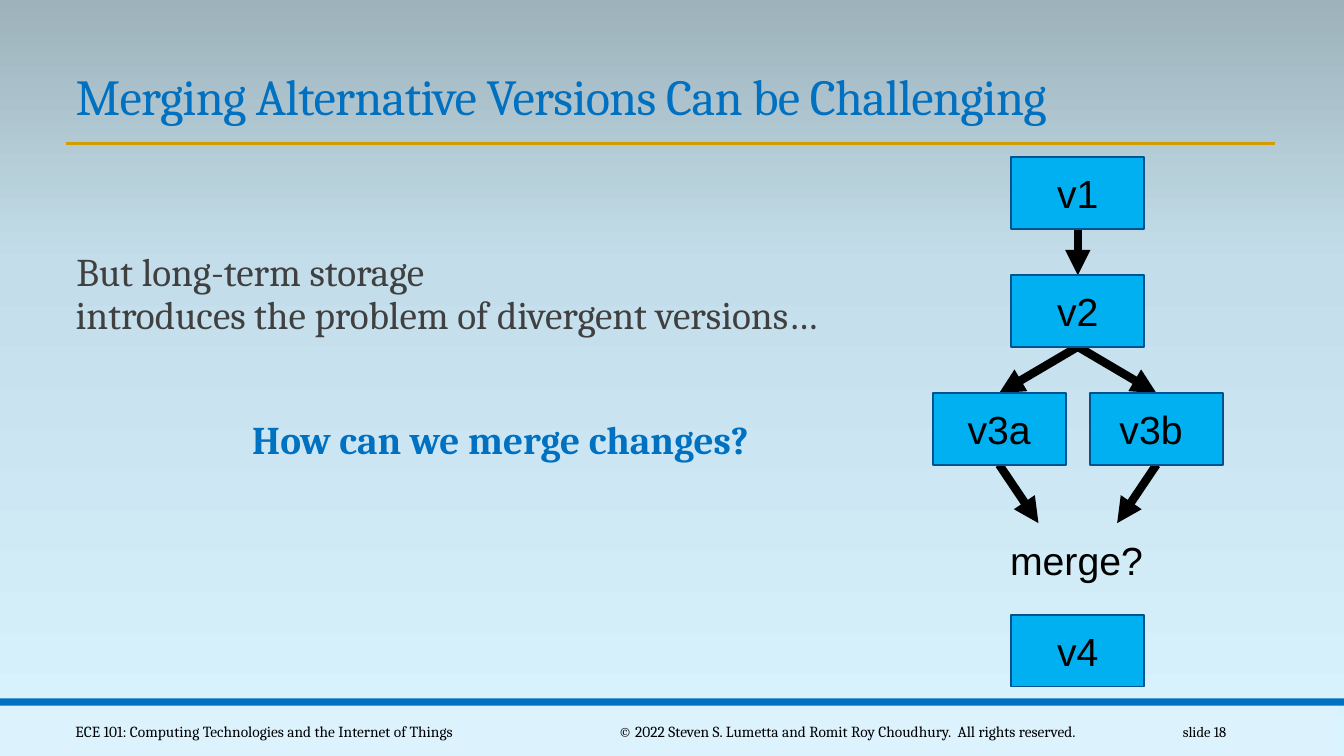
"""Build the slide about merging alternative versions."""
from dataclasses import dataclass

from lxml import etree
from pptx import Presentation
from pptx import util as u
from pptx.dml.color import RGBColor
from pptx.enum import shapes, text
from pptx.oxml import parse_xml
from pptx.oxml import ns


@dataclass(frozen=True)
class Theme:
    serif: str = "Cambria"
    sans: str = "Arial"
    blue: str = "0070C0"
    gold: str = "D09E00"
    grey: str = "404040"
    black: str = "000000"
    footer_fill: str = "DCF3FD"
    box_fill: str = "00B0F0"
    box_line: str = "00538E"
    backdrop: tuple = ((0, "DAF4FF"), (65, "C3DEEA"), (100, "9DB2BA"))
    title_size: float = 36
    body_size: float = 28
    footer_size: float = 11
    number_size: float = 10.5


theme = Theme()
LEFT, CENTER, RIGHT = text.PP_ALIGN.LEFT, text.PP_ALIGN.CENTER, text.PP_ALIGN.RIGHT


def add_span(para, words, font, size, color, align=LEFT):
    para.alignment = align
    span = para.add_run()
    span.text = words
    span.font.name = font
    span.font.size = u.Pt(size)
    span.font.color.rgb = RGBColor.from_string(color)
    return span


def add_line(slide, start, end, color, width, arrow=False):
    ends = [u.Inches(value) for value in (*start, *end)]
    line = slide.shapes.add_connector(shapes.MSO_CONNECTOR.STRAIGHT, *ends)
    line.line.color.rgb = RGBColor.from_string(color)
    line.line.width = u.Pt(width)
    if arrow:
        etree.SubElement(line.line._get_or_add_ln(), ns.qn("a:tailEnd"), type="triangle")
    etree.SubElement(line._element.spPr, ns.qn("a:effectLst"))


deck = Presentation()
deck.slide_width, deck.slide_height = u.Inches(13.33), u.Inches(7.5)
page = deck.slides.add_slide(deck.slide_layouts[1])

stops = "".join(
    f'<a:gs pos="{place * 1000}"><a:srgbClr val="{color}"/></a:gs>'
    for place, color in theme.backdrop
)
page._element.cSld.insert(0, parse_xml(
    f'<p:bg {ns.nsdecls("p", "a")}><p:bgPr><a:gradFill rotWithShape="1">'
    f'<a:gsLst>{stops}</a:gsLst><a:lin ang="16200000" scaled="0"/></a:gradFill>'
    f'<a:effectLst/></p:bgPr></p:bg>'
))

for left, top, height, color in (
    (-0.06, 7, 0.5, theme.footer_fill),
    (0, 6.93, 0.07, theme.blue),
):
    band = page.shapes.add_shape(
        shapes.MSO_SHAPE.RECTANGLE,
        u.Inches(left), u.Inches(top), u.Inches(13.33), u.Inches(height),
    )
    band.shadow.inherit = False
    band.fill.solid()
    band.fill.fore_color.rgb = RGBColor.from_string(color)
    band.line.fill.background()
add_line(page, (0.65, 1.42), (12.65, 1.42), theme.gold, 2)

title, body = page.placeholders
for holder, top, width, height in ((title, 0.59, 12.01, 0.71), (body, 1.78, 8.52, 4.64)):
    holder.left, holder.top = u.Inches(0.65), u.Inches(top)
    holder.width, holder.height = u.Inches(width), u.Inches(height)
    holder.text_frame.auto_size = text.MSO_AUTO_SIZE.NONE
    holder.text_frame.word_wrap = True

title.text_frame.vertical_anchor = text.MSO_ANCHOR.BOTTOM
heading = title.text_frame.paragraphs[0]
heading.line_spacing = 0.85
span = add_span(heading, "Merging Alternative Versions Can be Challenging",
                theme.serif, theme.title_size, theme.blue)
span._r.get_or_add_rPr().set("spc", "-50")

frame = body.text_frame
frame.vertical_anchor = text.MSO_ANCHOR.TOP
frame.margin_left = frame.margin_right = 0
frame.margin_top, frame.margin_bottom = u.Inches(0.73), u.Inches(0.05)
problem, question = frame.paragraphs[0], frame.add_paragraph()
for para, space_before in ((problem, 0), (question, 57)):
    settings = para._p.get_or_add_pPr()
    settings.set("marL", str(u.Inches(0.1)))
    settings.set("indent", str(u.Inches(-0.1)))
    bullet_color = etree.SubElement(settings, ns.qn("a:buClr"))
    etree.SubElement(bullet_color, ns.qn("a:srgbClr"), val=theme.blue)
    etree.SubElement(settings, ns.qn("a:buChar"), char=" ")
    para.line_spacing = 0.9
    para.space_before, para.space_after = u.Pt(space_before), u.Pt(2)

add_span(problem, "But long-term storage", theme.serif, theme.body_size, theme.grey)
problem.add_line_break()
add_span(problem, "introduces the problem of divergent versions…",
         theme.serif, theme.body_size, theme.grey)
add_span(question, "How can we merge changes?",
         theme.serif, theme.body_size, theme.blue, CENTER).font.bold = True

for words, left, width, size, align in (
    ("slide 18", 10.83, 1.43, theme.number_size, RIGHT),
    ("ECE 101: Computing Technologies and the Internet of Things",
     0.65, 4.58, theme.footer_size, LEFT),
    ("© 2022 Steven S. Lumetta and Romit Roy Choudhury.  All rights reserved.",
     5.46, 5.89, theme.footer_size, CENTER),
):
    box = page.shapes.add_textbox(u.Inches(left), u.Inches(7.06), u.Inches(width), u.Inches(0.4))
    box.text_frame.word_wrap = True
    box.text_frame.vertical_anchor = text.MSO_ANCHOR.MIDDLE
    add_span(box.text_frame.paragraphs[0], words, theme.serif, size, theme.black, align)

BOX_WIDTH, BOX_HEIGHT = 1.32, 0.71
MIDDLE, BRANCH = 10.69, 0.78
V1_TOP, V2_TOP, V3_TOP, V4_TOP = 1.56, 2.73, 3.9, 6.1

add_line(page, (MIDDLE, V1_TOP + BOX_HEIGHT), (MIDDLE, V2_TOP), theme.black, 6, arrow=True)
for side in (-1, 1):
    branch = MIDDLE + side * BRANCH
    add_line(page, (MIDDLE, V2_TOP + BOX_HEIGHT), (branch, V3_TOP), theme.black, 6, arrow=True)
    add_line(page, (branch, V3_TOP + BOX_HEIGHT), (MIDDLE + side * BRANCH / 2, 5.19),
             theme.black, 6, arrow=True)

for name, center, top in (
    ("v1", MIDDLE, V1_TOP),
    ("v2", MIDDLE, V2_TOP),
    ("v3a", MIDDLE - BRANCH, V3_TOP),
    ("v3b ", MIDDLE + BRANCH, V3_TOP),
    ("v4", MIDDLE, V4_TOP),
):
    version = page.shapes.add_shape(
        shapes.MSO_SHAPE.RECTANGLE,
        u.Inches(center - BOX_WIDTH / 2), u.Inches(top), u.Inches(BOX_WIDTH), u.Inches(BOX_HEIGHT),
    )
    version.shadow.inherit = False
    version.fill.solid()
    version.fill.fore_color.rgb = RGBColor.from_string(theme.box_fill)
    version.line.color.rgb = RGBColor.from_string(theme.box_line)
    version.line.width = u.Pt(1.25)
    version.text_frame.vertical_anchor = text.MSO_ANCHOR.MIDDLE
    add_span(version.text_frame.paragraphs[0], name,
             theme.sans, theme.body_size, theme.black, CENTER)

merge = page.shapes.add_textbox(u.Inches(9.92), u.Inches(5.27), u.Inches(1.54), u.Inches(0.57))
merge.text_frame.word_wrap = False
merge.text_frame.auto_size = text.MSO_AUTO_SIZE.SHAPE_TO_FIT_TEXT
add_span(merge.text_frame.paragraphs[0], "merge?", theme.sans, theme.body_size, theme.black)

deck.save("out.pptx")
